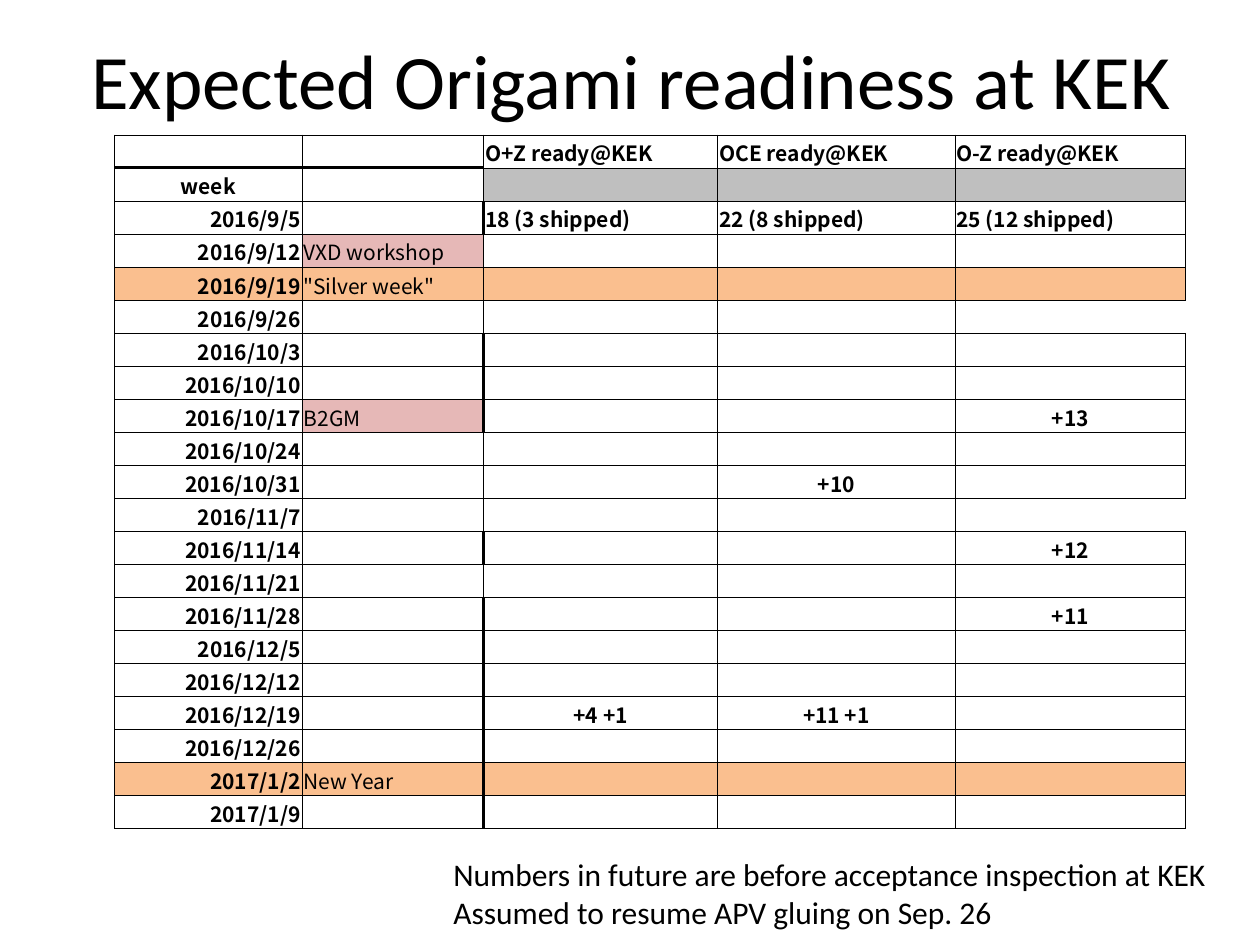
from typing import NamedTuple

from lxml.etree import SubElement
from pptx import Presentation
from pptx.dml.color import RGBColor
from pptx.enum.text import MSO_ANCHOR as Anchor, PP_ALIGN as Align
from pptx.oxml.ns import qn
from pptx.util import Cm, Pt

COLORS = {"black": "000000", "gray": "BFBFBF", "pink": "E6B8B7", "orange": "FABF8F"}
TITLE_FONT = "Calibri"
TABLE_FONT = "Noto Sans CJK JP"
THIN, THICK = 0.5, 2
COLUMN_WIDTHS = [3.78, 3.66, 4.72, 4.78, 4.65]
NOTES = [
    "Numbers in future are before acceptance inspection at KEK",
    "Assumed to resume APV gluing on Sep. 26",
]


class Week(NamedTuple):
    label: str
    event: str = ""
    ready: tuple[str, str, str] = ("", "", "")
    fills: tuple[str, ...] = ("",) * 5
    heavy_divider: bool = False  # between the event and the first count
    open_right: bool = False


HOLIDAY = ("orange",) * 5
MEETING = ("", "pink", "", "", "")
WEEKS = [
    Week("", ready=("O+Z ready@KEK", "OCE ready@KEK", "O-Z ready@KEK")),
    Week("week", fills=("", "", "gray", "gray", "gray")),
    Week("2016/9/5", ready=("18 (3 shipped)", "22 (8 shipped)", "25 (12 shipped)"),
         heavy_divider=True),
    Week("2016/9/12", "VXD workshop", fills=MEETING),
    Week("2016/9/19", '"Silver week"', fills=HOLIDAY),
    Week("2016/9/26", open_right=True),
    Week("2016/10/3", heavy_divider=True),
    Week("2016/10/10", heavy_divider=True),
    Week("2016/10/17", "B2GM", ("", "", "+13"), MEETING, heavy_divider=True),
    Week("2016/10/24"),
    Week("2016/10/31", ready=("", "+10", "")),
    Week("2016/11/7", open_right=True),
    Week("2016/11/14", ready=("", "", "+12"), heavy_divider=True),
    Week("2016/11/21"),
    Week("2016/11/28", ready=("", "", "+11"), heavy_divider=True),
    Week("2016/12/5", heavy_divider=True),
    Week("2016/12/12", heavy_divider=True),
    Week("2016/12/19", ready=("+4 +1", "+11 +1", ""), heavy_divider=True),
    Week("2016/12/26", heavy_divider=True),
    Week("2017/1/2", "New Year", fills=HOLIDAY, heavy_divider=True),
    Week("2017/1/9", heavy_divider=True),
]


def color(name: str) -> RGBColor:
    return RGBColor.from_string(COLORS[name])


def add_run(paragraph, text: str, size: float, font: str, bold: bool = False) -> None:
    run = paragraph.add_run()
    run.text = text
    run.font.size = Pt(size)
    run.font.name = font
    run.font.bold = bold
    run.font.color.rgb = color("black")


def border_widths(week: Week, row: int, column: int) -> dict[str, float]:
    """Width in points of each side; zero means no line."""
    widths = dict.fromkeys(("L", "R", "T", "B"), THIN)
    if column < 2 and row < 2:
        widths["B" if row == 0 else "T"] = THICK
    if week.heavy_divider and column in (1, 2):
        widths["R" if column == 1 else "L"] = THICK
    if week.open_right and column == 4:
        widths["R"] = 0
    return widths


def draw_borders(cell, widths: dict[str, float]) -> None:
    properties = cell._tc.get_or_add_tcPr()
    for side, width in widths.items():
        line = SubElement(properties, qn(f"a:ln{side}"), w=str(Pt(width)))
        if width:
            fill = SubElement(line, qn("a:solidFill"))
            SubElement(fill, qn("a:srgbClr"), val=COLORS["black"])
        else:
            SubElement(line, qn("a:noFill"))


def alignment(text: str, column: int) -> Align:
    if text == "week" or text.startswith("+"):
        return Align.CENTER
    return Align.RIGHT if column == 0 else Align.LEFT


def draw_cell(cell, week: Week, row: int, column: int) -> None:
    text = (week.label, week.event, *week.ready)[column]
    cell.margin_left = cell.margin_right = cell.margin_top = Cm(0.03)
    cell.margin_bottom = 0
    cell.vertical_anchor = Anchor.BOTTOM
    draw_borders(cell, border_widths(week, row, column))
    if week.fills[column]:
        cell.fill.solid()
        cell.fill.fore_color.rgb = color(week.fills[column])
    else:
        cell.fill.background()
    paragraph = cell.text_frame.paragraphs[0]
    paragraph.alignment = alignment(text, column)
    if text:
        add_run(paragraph, text, 12, TABLE_FONT, bold=column != 1)
    else:
        # Keeps an empty cell from stretching its row
        SubElement(paragraph._p, qn("a:endParaRPr"), sz="1200")


def draw_schedule(slide) -> None:
    height = Cm(14)
    frame = slide.shapes.add_table(len(WEEKS), len(COLUMN_WIDTHS), Cm(2.31), Cm(2.72),
                                   Cm(sum(COLUMN_WIDTHS)), height)
    table = frame.table
    table.first_row = table.horz_banding = False
    for column, width in zip(table.columns, COLUMN_WIDTHS):
        column.width = Cm(width)
    for row, week in enumerate(WEEKS):
        table.rows[row].height = height // len(WEEKS)
        for column in range(len(COLUMN_WIDTHS)):
            draw_cell(table.cell(row, column), week, row, column)


def draw_title(slide) -> None:
    title = slide.shapes.title
    title.left, title.top, title.width, title.height = Cm(1.3), Cm(0), Cm(22.86), Cm(3.18)
    title.text_frame.vertical_anchor = Anchor.MIDDLE
    paragraph = title.text_frame.paragraphs[0]
    paragraph.alignment = Align.CENTER
    add_run(paragraph, "Expected Origami readiness at KEK", 44, TITLE_FONT)


def draw_notes(slide) -> None:
    frame = slide.shapes.add_textbox(Cm(8.89), Cm(17.12), Cm(15.88), Cm(1.8)).text_frame
    frame.word_wrap = True
    for index, note in enumerate(NOTES):
        paragraph = frame.add_paragraph() if index else frame.paragraphs[0]
        add_run(paragraph, note, 18, TITLE_FONT)


def main() -> None:
    presentation = Presentation()
    presentation.slide_width, presentation.slide_height = Cm(25.4), Cm(19.05)
    slide = presentation.slides.add_slide(presentation.slide_layouts.get_by_name("Title Only"))
    draw_title(slide)
    draw_schedule(slide)
    draw_notes(slide)
    presentation.save("out.pptx")


if __name__ == "__main__":
    main()
